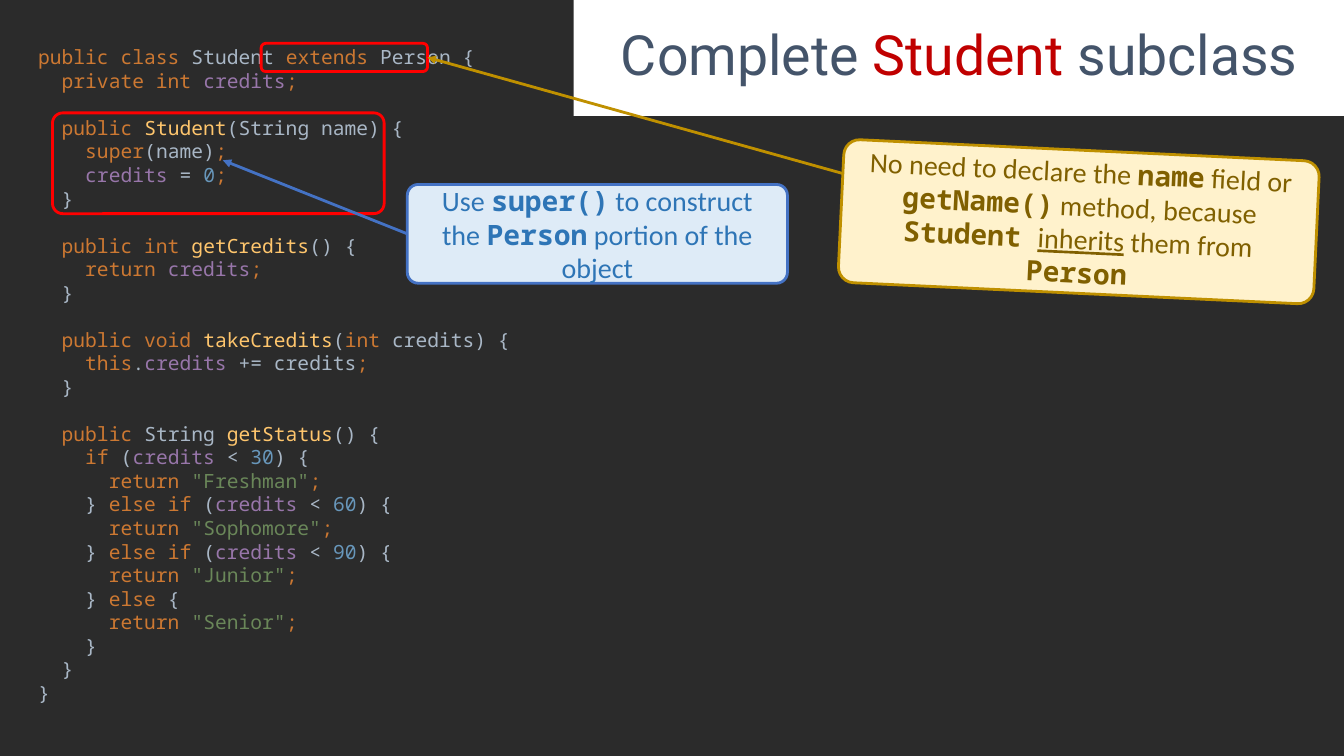
"""Build the slide that walks through the complete Student subclass."""
from lxml.etree import SubElement
from pptx import Presentation
from pptx.dml.color import RGBColor
from pptx.enum.shapes import MSO_CONNECTOR, MSO_SHAPE
from pptx.enum.text import MSO_ANCHOR, PP_ALIGN
from pptx.oxml.ns import qn
from pptx.util import Inches, Pt

BACKGROUND = RGBColor(0x2B, 0x2B, 0x2B)
WHITE = RGBColor(0xFF, 0xFF, 0xFF)
SLATE = RGBColor(0x44, 0x54, 0x6A)
DARK_RED = RGBColor(0xC0, 0x00, 0x00)
RED = RGBColor(0xFF, 0x00, 0x00)
BLUE = RGBColor(0x44, 0x72, 0xC4)
BLUE_TEXT = RGBColor(0x2E, 0x75, 0xB6)
PALE_BLUE = RGBColor(0xDE, 0xEB, 0xF7)
GOLD = RGBColor(0xBF, 0x90, 0x00)
GOLD_TEXT = RGBColor(0x80, 0x60, 0x00)
PALE_GOLD = RGBColor(0xFF, 0xF2, 0xCC)
SYNTAX = {
    "keyword": RGBColor(0xCC, 0x78, 0x32),
    "plain": RGBColor(0xA9, 0xB7, 0xC6),
    "field": RGBColor(0x98, 0x76, 0xAA),
    "method": RGBColor(0xFF, 0xC6, 0x6D),
    "number": RGBColor(0x68, 0x97, 0xBB),
    "string": RGBColor(0x6A, 0x87, 0x59),
}
MONO = "Noto Sans Mono"
CODE_SIZE = 14
CODE_LINE_HEIGHT = 16.8

CODE_BLOCKS = [
    [
        "keyword:public class |plain:Student |keyword:extends |plain:Person {",
        "keyword:  private int |field:credits|keyword:;",
    ],
    [
        "keyword:  public |method:Student|plain:(String name) {",
        "keyword:    super|plain:(name)|keyword:;",
        "field:    credits |plain:= |number:0|keyword:;",
        "plain:  }",
    ],
    [
        "keyword:  public int |method:getCredits|plain:() {",
        "keyword:    return |field:credits|keyword:;",
        "plain:  }",
    ],
    [
        "keyword:  public void |method:takeCredits|plain:(|keyword:int |plain:credits) {",
        "keyword:    this|plain:.|field:credits |plain:+= credits|keyword:;",
        "plain:  }",
    ],
    [
        "keyword:  public |plain:String |method:getStatus|plain:() {",
        "keyword:    if |plain:(|field:credits |plain:< |number:30|plain:) {",
        'keyword:      return |string:"Freshman"|keyword:;',
        "plain:    } |keyword:else if |plain:(|field:credits |plain:< |number:60|plain:) {",
        'keyword:      return |string:"Sophomore"|keyword:;',
        "plain:    } |keyword:else if |plain:(|field:credits |plain:< |number:90|plain:) {",
        'keyword:      return |string:"Junior"|keyword:;',
        "plain:    } |keyword:else |plain:{",
        'keyword:      return |string:"Senior"|keyword:;',
        "plain:    }",
        "plain:  }",
        "plain:}",
    ],
]


def add_text(paragraph, text, *, size, font, color, bold=False, underline=False):
    run = paragraph.add_run()
    run.text = text
    run.font.size = Pt(size)
    run.font.name = font
    run.font.color.rgb = color
    run.font.bold = bold
    run.font.underline = underline


def add_box(shapes, preset, place, *, fill=None, line=None, corner=None):
    shape = shapes.add_shape(preset, *[Inches(value) for value in place])
    shape.shadow.inherit = False
    if fill is None:
        shape.fill.background()
    else:
        shape.fill.solid()
        shape.fill.fore_color.rgb = fill
    if line is None:
        shape.line.fill.background()
    else:
        shape.line.color.rgb = line
        shape.line.width = Pt(2)
    if corner is not None:
        shape.adjustments[0] = corner
    shape.text_frame.word_wrap = True
    shape.text_frame.vertical_anchor = MSO_ANCHOR.MIDDLE
    shape.text_frame.paragraphs[0].alignment = PP_ALIGN.CENTER
    return shape


presentation = Presentation()
presentation.slide_width = Inches(13.33)
presentation.slide_height = Inches(7.5)
slide = presentation.slides.add_slide(presentation.slide_layouts[6])
slide.background.fill.solid()
slide.background.fill.fore_color.rgb = BACKGROUND

title = add_box(slide.shapes, MSO_SHAPE.RECTANGLE, (5.69, 0, 7.65, 1.15), fill=WHITE)
title_paragraph = title.text_frame.paragraphs[0]
title_paragraph.line_spacing = 0.9
for text, color in [("Complete ", SLATE), ("Student", DARK_RED), (" subclass", SLATE)]:
    add_text(title_paragraph, text, size=39.6, font="Roboto", color=color)

code_box = slide.shapes.add_textbox(Inches(0.28), Inches(0.4), Inches(5.41), Inches(6.7))
code_frame = code_box.text_frame
code_frame.word_wrap = True
for block_number, block in enumerate(CODE_BLOCKS):
    for line_number, code_line in enumerate(block):
        first = block_number == line_number == 0
        paragraph = code_frame.paragraphs[0] if first else code_frame.add_paragraph()
        if block_number > 0 and line_number == 0:
            paragraph.space_before = Pt(CODE_LINE_HEIGHT)
        for token in code_line.split("|"):
            kind, text = token.split(":")
            add_text(paragraph, text, size=CODE_SIZE, font=MONO, color=SYNTAX[kind])

for place, corner in [((2.59, 0.43, 1.65, 0.28), 0.158), ((0.52, 1.12, 3.29, 1), 0.102)]:
    add_box(slide.shapes, MSO_SHAPE.ROUNDED_RECTANGLE, place, line=RED, corner=corner)

CALLOUTS = [
    ((4.04, 2.32, 2.21, 1.59), (4.04, 1.83, 3.77, 0.98), 0, PALE_BLUE, BLUE, BLUE_TEXT,
     [("Use ", ""), ("super()", "code"), (" to construct the ", ""), ("Person", "code"),
      (" portion of the object", "")]),
    ((8.39, 1.73, 4.24, 0.57), (8.34, 1.49, 4.72, 1.42), 2.7, PALE_GOLD, GOLD, GOLD_TEXT,
     [("No need to declare the ", ""), ("name", "code"), (" field or ", ""),
      ("getName()", "code"), (" method, because ", ""), ("Student ", "code"),
      ("inherits", "underline"), (" them from ", ""), ("Person", "code")]),
]
for ends, place, rotation, fill, line, color, pieces in CALLOUTS:
    arrow = slide.shapes.add_connector(MSO_CONNECTOR.STRAIGHT, *[Inches(value) for value in ends])
    arrow.line.color.rgb = line
    arrow.line.width = Pt(2)
    SubElement(arrow.line._get_or_add_ln(), qn("a:tailEnd"), type="triangle")
    SubElement(arrow._element.spPr, qn("a:effectLst"))

    callout = add_box(slide.shapes, MSO_SHAPE.ROUNDED_RECTANGLE, place,
                      fill=fill, line=line, corner=0.11)
    callout.rotation = rotation
    for text, style in pieces:
        is_code = style == "code"
        add_text(callout.text_frame.paragraphs[0], text, size=20,
                 font=MONO if is_code else "Calibri", color=color,
                 bold=is_code, underline=style == "underline")

presentation.save("out.pptx")
